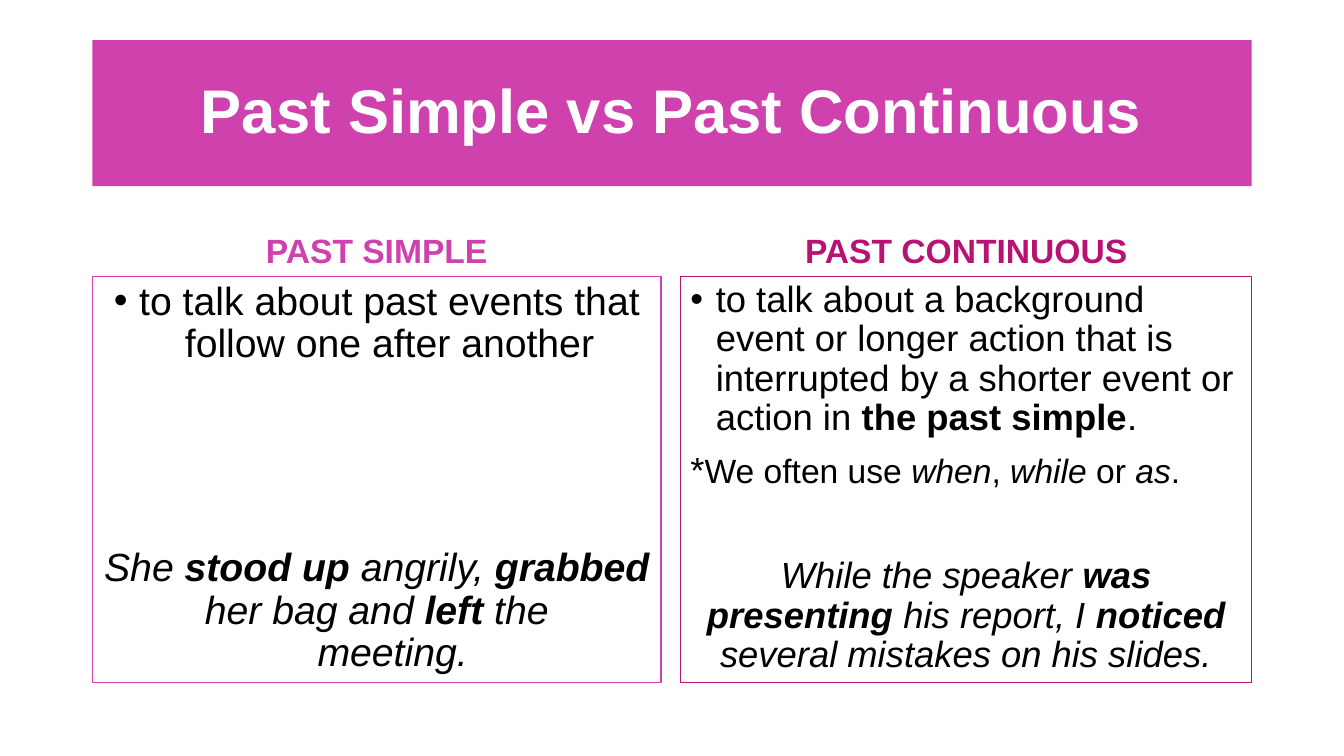
from lxml import etree
from pptx import Presentation
from pptx.dml.color import RGBColor
from pptx.enum.text import MSO_ANCHOR, MSO_AUTO_SIZE, PP_ALIGN
from pptx.oxml.ns import qn
from pptx.util import Cm, Pt

LEFT, CENTER = PP_ALIGN.LEFT, PP_ALIGN.CENTER
TOP, MIDDLE, BOTTOM = MSO_ANCHOR.TOP, MSO_ANCHOR.MIDDLE, MSO_ANCHOR.BOTTOM
FONT = "Arial"
PINK, CRIMSON, BLACK, WHITE = "CF41AD", "B71373", "000000", "FFFFFF"

# Spans are (text, style), where style holds "b" for bold and "i" for italic.
TITLE = [dict(spans=[("Past Simple vs Past Continuous", "b")], size=44, color=WHITE)]
COLUMNS = [
    dict(heading="PAST SIMPLE", color=PINK, left=2.33, width=14.33, body=[
        dict(spans=[("to talk about past events that follow one after another", "")],
             size=28, bullet=True),
        dict(spans=[("She ", "i"), ("stood up ", "bi"), ("angrily, ", "i"),
                    ("grabbed ", "bi"), ("her bag and ", "i"), ("left ", "bi"),
                    ("the", "i")], size=28, before=130),
        dict(spans=[("meeting.", "i")], size=28, indent=0.8),
    ]),
    dict(heading="PAST CONTINUOUS", color=CRIMSON, left=17.15, width=14.4, body=[
        dict(spans=[("to talk about a background event or longer action that is "
                     "interrupted by a shorter event or action in ", ""),
                    ("the past simple", "b"), (".", "")],
             size=26, bullet=True, align=LEFT),
        dict(spans=[("*", "", 26), ("We often use ", ""), ("when", "i"), (", ", ""),
                    ("while ", "i"), ("or ", ""), ("as", "i"), (".", "")],
             size=24, before=10, align=LEFT),
        dict(spans=[("While the speaker ", "i"), ("was presenting ", "bi"),
                    ("his report, I ", "i"), ("noticed ", "bi"),
                    ("several mistakes on his slides.", "i")], size=26, before=47),
    ]),
]
HEADING_TOP, HEADING_HEIGHT, BODY_HEIGHT = 4.68, 2.28, 10.24


def rgb(value):
    return RGBColor.from_string(value)


def place(shape, left, top, width, height):
    shape.left, shape.top = Cm(left), Cm(top)
    shape.width, shape.height = Cm(width), Cm(height)


def set_indent(para, indent, bullet):
    props = para._p.get_or_add_pPr()
    props.set("marL", str(Cm(indent)))
    props.set("indent", str(-Cm(indent) if bullet else 0))
    if bullet:
        etree.SubElement(props, qn("a:buFont")).set("typeface", FONT)
        etree.SubElement(props, qn("a:buChar")).set("char", "•")


def write(shape, paragraphs, anchor):
    frame = shape.text_frame
    frame.word_wrap = True
    frame.auto_size = MSO_AUTO_SIZE.NONE
    frame.vertical_anchor = anchor
    for index, item in enumerate(paragraphs):
        para = frame.add_paragraph() if index else frame.paragraphs[0]
        bullet = item.get("bullet", False)
        set_indent(para, 0.64 if bullet else item.get("indent", 0), bullet)
        para.alignment = item.get("align", CENTER)
        para.line_spacing = 0.9
        para.space_before = Pt(item.get("before", 0))
        para.font.name = FONT
        para.font.color.rgb = rgb(item.get("color", BLACK))
        for text, style, *own_size in item["spans"]:
            span = para.add_run()
            span.text = text
            span.font.name = FONT
            span.font.size = Pt(own_size[0] if own_size else item["size"])
            span.font.bold = "b" in style
            span.font.italic = "i" in style
            span.font.color.rgb = rgb(item.get("color", BLACK))


def add_box(page, left, top, width, height, paragraphs, anchor):
    box = page.shapes.add_textbox(Cm(left), Cm(top), Cm(width), Cm(height))
    write(box, paragraphs, anchor)
    return box


def main():
    deck = Presentation()
    deck.slide_width, deck.slide_height = Cm(33.87), Cm(19.05)
    page = deck.slides.add_slide(deck.slide_layouts[5])

    title = page.shapes.title
    place(title, 2.33, 1.01, 29.21, 3.68)
    title.fill.solid()
    title.fill.fore_color.rgb = rgb(PINK)
    write(title, TITLE, MIDDLE)

    for column in COLUMNS:
        left, width, color = column["left"], column["width"], column["color"]
        heading = [dict(spans=[(column["heading"], "b")], size=24, color=color)]
        add_box(page, left, HEADING_TOP, width, HEADING_HEIGHT, heading, BOTTOM)
        body = add_box(page, left, HEADING_TOP + HEADING_HEIGHT, width, BODY_HEIGHT,
                       column["body"], TOP)
        body.line.color.rgb = rgb(color)
        body.line.width = Pt(0.75)

    deck.save("out.pptx")


if __name__ == "__main__":
    main()
